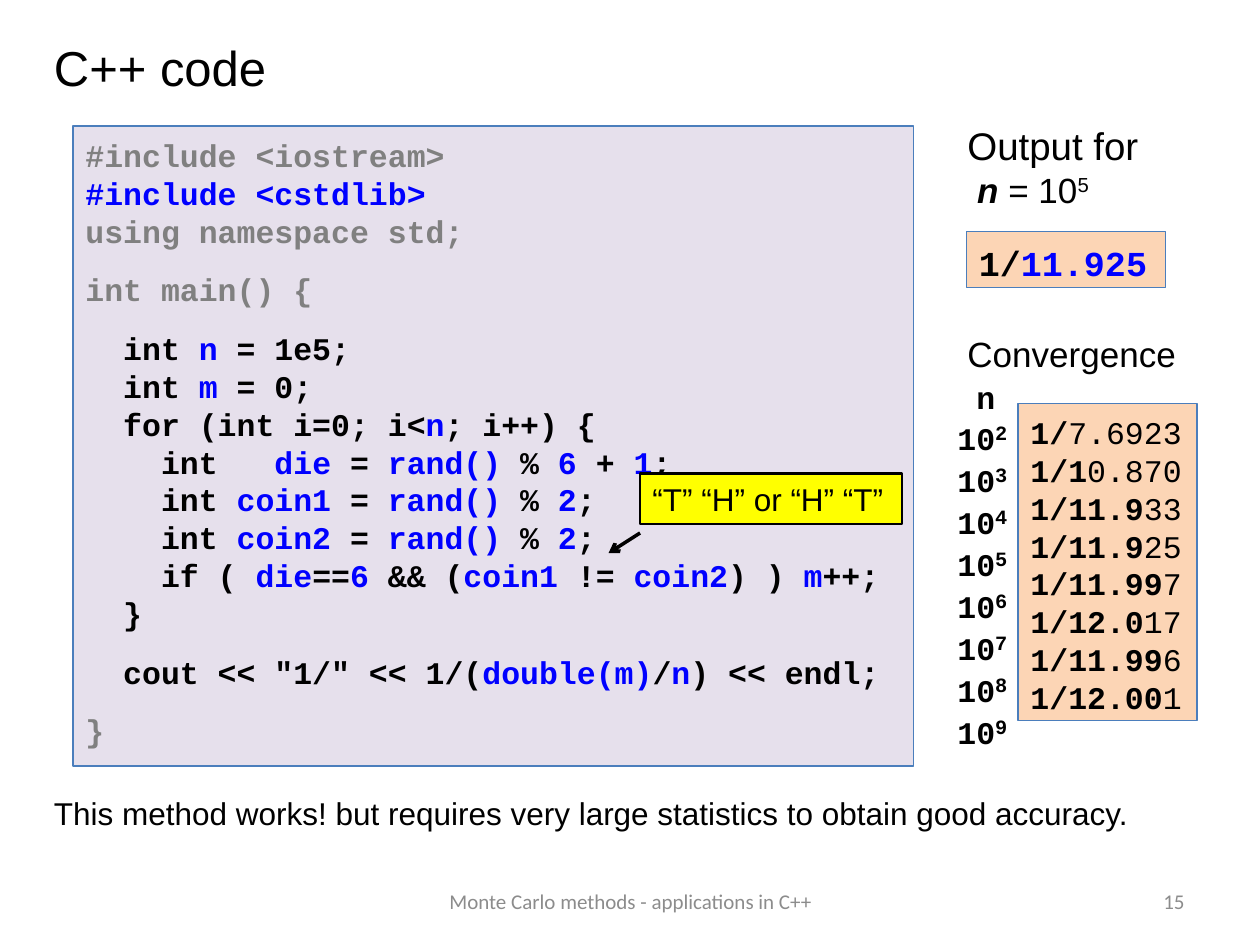
import dataclasses

import lxml.etree
import pptx
import pptx.dml.color
import pptx.enum.shapes
import pptx.enum.text
import pptx.oxml.ns
import pptx.util

Inches = pptx.util.Inches
Pt = pptx.util.Pt
RGBColor = pptx.dml.color.RGBColor
Align = pptx.enum.text.PP_ALIGN
Anchor = pptx.enum.text.MSO_ANCHOR

BLACK = RGBColor(0x00, 0x00, 0x00)
BLUE = RGBColor(0x00, 0x00, 0xFF)
GRAY = RGBColor(0x80, 0x80, 0x80)
FOOTER_GRAY = RGBColor(0x8C, 0x8C, 0x8C)
LILAC = RGBColor(0xE6, 0xE0, 0xEC)
PEACH = RGBColor(0xFC, 0xD5, 0xB5)
YELLOW = RGBColor(0xFF, 0xFF, 0x00)
OUTLINE = RGBColor(0x4B, 0x7E, 0xBC)

SANS = "Arial"
MONO = "Courier New"
FOOTER = "Calibri"

CODE = [
    ("#include <iostream>", GRAY, 0),
    ("#include <cstdlib>", BLUE, 0),
    ("using namespace std;", GRAY, 0),
    ("int main() {", GRAY, 12),
    ("  int |n| = 1e5;", BLACK, 12),
    ("  int |m| = 0;", BLACK, 0),
    ("  for (int i=0; i<|n|; i++) {", BLACK, 0),
    ("    int   |die |=| rand() |%| 6 |+| 1|;", BLACK, 0),
    ("    int |coin1 |=| rand() |%| 2|;", BLACK, 0),
    ("    int |coin2 |=| rand() |%| 2|;", BLACK, 0),
    ("    if ( |die|==|6 |&& (|coin1 |!=| coin2|) ) |m|++;", BLACK, 0),
    ("  }", BLACK, 0),
    ('  cout << "1/" << 1/(|double(m)|/|n|) << endl;', BLACK, 12),
    ("}", GRAY, 12),
]

RESULTS = ["1/|7.6923", "1/1|0.870", "1/11.9|33", "1/11.9|25",
           "1/11.99|7", "1/12.0|17", "1/11.99|6", "1/12.00|1"]


def blue(font):
    font.color.rgb = BLUE


def regular(font):
    font.bold = False


def bold_italic(font):
    font.bold = True
    font.italic = True


def superscript(font):
    font.size = Pt(20)
    font._element.set("baseline", "30000")


@dataclasses.dataclass
class SlideBuilder:
    slide: object
    line_factor: float = 1.2
    mono_top: float = 0.08

    def text_box(self, left, top, width, height, anchor=Anchor.TOP):
        shape = self.slide.shapes.add_textbox(
            Inches(left), Inches(top), Inches(width), Inches(height))
        shape.text_frame.word_wrap = True
        shape.text_frame.vertical_anchor = anchor
        return shape.text_frame

    def panel(self, left, top, width, height, fill, line=OUTLINE, weight=0.75):
        shape = self.slide.shapes.add_shape(
            pptx.enum.shapes.MSO_SHAPE.RECTANGLE,
            Inches(left), Inches(top), Inches(width), Inches(height))
        shape.shadow.inherit = False
        shape.fill.solid()
        shape.fill.fore_color.rgb = fill
        shape.line.color.rgb = line
        shape.line.width = Pt(weight)
        shape.text_frame.word_wrap = True
        shape.text_frame.vertical_anchor = Anchor.TOP
        return shape.text_frame

    def add_line(self, frame, text, size, font=SANS, color=BLACK, accent=None,
                 before=0, align=Align.LEFT, spacing=None):
        paragraph = frame.paragraphs[0]
        if paragraph.runs:
            paragraph = frame.add_paragraph()
        paragraph.alignment = align
        paragraph.space_before = Pt(before)
        paragraph.line_spacing = Pt(spacing or size * self.line_factor)
        paragraph.font.name = font
        paragraph.font.size = Pt(size)
        paragraph.font.color.rgb = color
        paragraph.font.bold = font == MONO
        if font == MONO:
            frame.margin_top = Inches(self.mono_top)
        for index, part in enumerate(text.split("|")):
            run = paragraph.add_run()
            run.text = part
            if index % 2:
                accent(run.font)
        return paragraph

    def arrow(self, start, end, color=BLACK, weight=2):
        connector = self.slide.shapes.add_connector(
            pptx.enum.shapes.MSO_CONNECTOR.STRAIGHT,
            *map(Inches, start + end))
        connector.line.color.rgb = color
        connector.line.width = Pt(weight)
        qualified = pptx.oxml.ns.qn
        line = connector.line._get_or_add_ln()
        lxml.etree.SubElement(line, qualified("a:tailEnd"), type="arrow")
        lxml.etree.SubElement(connector._element.spPr, qualified("a:effectLst"))


def main():
    presentation = pptx.Presentation()
    presentation.slide_width = Inches(10)
    presentation.slide_height = Inches(7.5)
    builder = SlideBuilder(
        presentation.slides.add_slide(presentation.slide_layouts[6]))

    builder.add_line(builder.text_box(0.33, 0.25, 1.92, 0.57), "C++ code", 28)
    builder.add_line(builder.text_box(3.42, 6.95, 3.17, 0.4, Anchor.MIDDLE),
                     "Monte Carlo methods - applications in C++", 12,
                     FOOTER, FOOTER_GRAY, align=Align.CENTER)
    builder.add_line(builder.text_box(7.17, 6.95, 2.33, 0.4, Anchor.MIDDLE),
                     "15", 12, FOOTER, FOOTER_GRAY, align=Align.RIGHT)

    code = builder.panel(0.58, 1, 6.67, 5.08, LILAC)
    for text, color, before in CODE:
        builder.add_line(code, text, 18, MONO, color, blue, before)

    builder.add_line(builder.text_box(0.33, 6.25, 9.08, 0.4),
                     "This method works! but requires very large statistics "
                     "to obtain good accuracy.", 18)

    output = builder.panel(7.67, 1.84, 1.58, 0.44, PEACH)
    builder.add_line(output, "1/|11.925", 20, MONO, accent=blue)

    results = builder.panel(8.08, 3.2, 1.42, 2.52, PEACH)
    for text in RESULTS:
        builder.add_line(results, text, 18, MONO, accent=regular)

    samples = builder.text_box(7.5, 2.92, 0.67, 2.83)
    builder.add_line(samples, " n", 18, MONO)
    for exponent in range(2, 10):
        builder.add_line(samples, f"10|{exponent}", 18, MONO,
                         accent=superscript, spacing=24)

    builder.add_line(builder.text_box(7.58, 2.59, 2, 0.44), "Convergence", 20)

    heading = builder.text_box(7.58, 0.92, 1.67, 0.81)
    builder.add_line(heading, "Output for", 22)
    sample_size = builder.add_line(heading, " |n| = 10", 20, accent=bold_italic)
    power = sample_size.add_run()
    power.text = "5"
    superscript(power.font)

    callout = builder.panel(5.08, 3.76, 2.08, 0.4, YELLOW, BLACK, 1.5)
    builder.add_line(callout, "“T” “H” or “H” “T”", 18)
    builder.arrow((5.08, 4.23), (4.83, 4.39))

    presentation.save("out.pptx")


if __name__ == "__main__":
    main()
